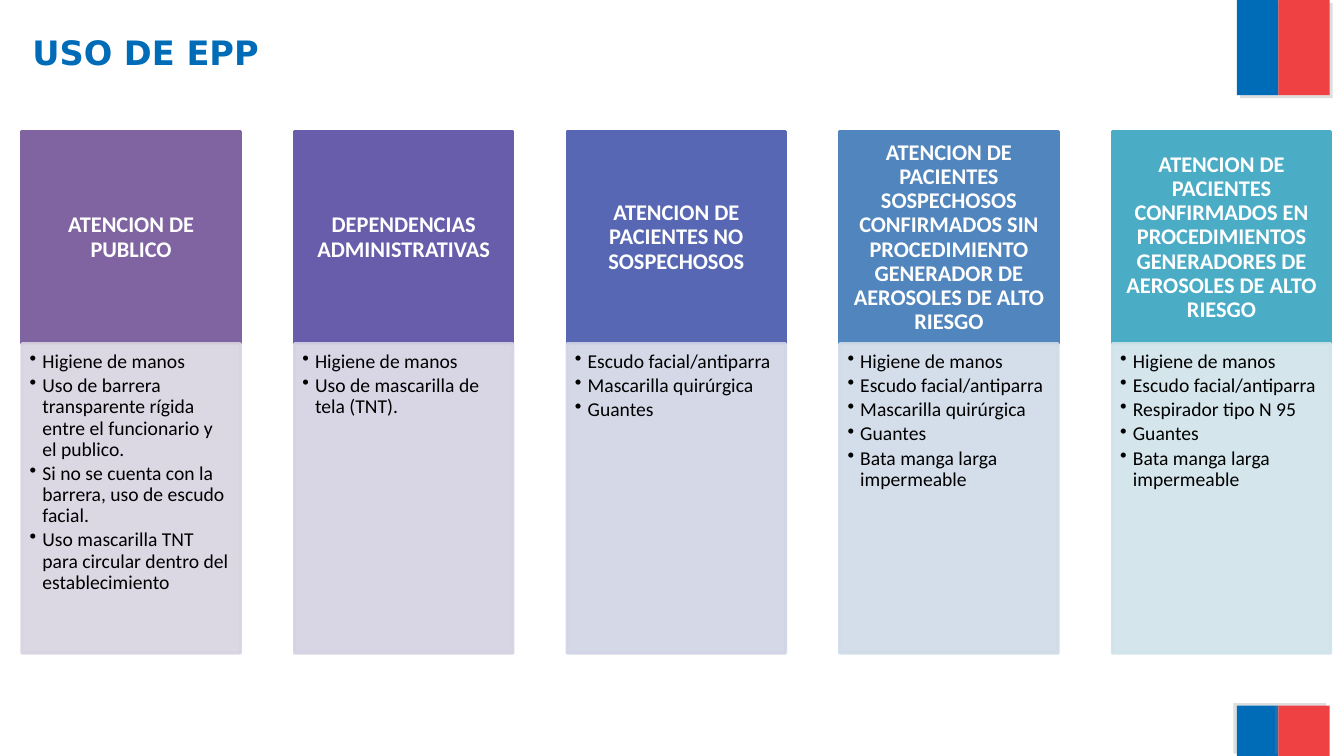
from lxml import etree
from pptx import Presentation
from pptx.dml.color import RGBColor
from pptx.enum.shapes import MSO_SHAPE
from pptx.enum.text import MSO_ANCHOR, PP_ALIGN
from pptx.oxml.ns import qn
from pptx.util import Cm, Pt

RECT = MSO_SHAPE.RECTANGLE
TOP, MIDDLE = MSO_ANCHOR.TOP, MSO_ANCHOR.MIDDLE
LEFT, CENTER = PP_ALIGN.LEFT, PP_ALIGN.CENTER

BLUE, RED = "006CB7", "EF4144"
HANDS, SHIELD, MASK = "Higiene de manos", "Escudo facial/antiparra", "Mascarilla quirúrgica"
GLOVES, GOWN = "Guantes", "Bata manga larga impermeable"

# Heading, heading colour, body colour, items
COLUMNS = [
    ("ATENCION DE PUBLICO", "8064A2", "D8D3E0",
     [HANDS,
      "Uso de barrera transparente rígida entre el funcionario y el publico.",
      "Si no se cuenta con la barrera, uso de escudo facial.",
      "Uso mascarilla TNT para circular dentro del establecimiento"]),
    ("DEPENDENCIAS ADMINISTRATIVAS", "685DAB", "D4D2E3",
     [HANDS, "Uso de mascarilla de tela (TNT)."]),
    ("ATENCION DE PACIENTES NO SOSPECHOSOS", "5767B4", "D1D4E5",
     [SHIELD, MASK, GLOVES]),
    ("ATENCION DE PACIENTES SOSPECHOSOS CONFIRMADOS SIN PROCEDIMIENTO "
     "GENERADOR DE AEROSOLES DE ALTO RIESGO", "5185BD", "D0DBE8",
     [HANDS, SHIELD, MASK, GLOVES, GOWN]),
    ("ATENCION DE PACIENTES CONFIRMADOS EN PROCEDIMIENTOS GENERADORES "
     "DE AEROSOLES DE ALTO RIESGO", "4BACC6", "D0E3EA",
     [HANDS, SHIELD, "Respirador tipo N 95", GLOVES, GOWN]),
]


def color(code):
    return RGBColor.from_string(code)


def style(para, font, size, code, bold=False):
    for run in para.runs:
        run.font.name = font
        run.font.size = Pt(size)
        run.font.bold = bold
        run.font.color.rgb = color(code)


def add_rect(slide, x, y, w, h, code):
    rect = slide.shapes.add_shape(RECT, Cm(x), Cm(y), Cm(w), Cm(h))
    rect.shadow.inherit = False
    rect.fill.solid()
    rect.fill.fore_color.rgb = color(code)
    rect.line.fill.background()
    return rect


def add_panel(slide, x, y, w, h, code, insets, anchor):
    panel = add_rect(slide, x, y, w, h, code)
    panel.line.color.rgb = color(code)
    panel.line.width = Pt(2)
    frame = panel.text_frame
    frame.word_wrap = True
    frame.vertical_anchor = anchor
    (frame.margin_left, frame.margin_top,
     frame.margin_right, frame.margin_bottom) = [Cm(inset) for inset in insets]
    return panel


def add_shade(shape, angle):
    effects = shape._element.spPr.find(qn("a:effectLst"))
    shade = etree.SubElement(effects, qn("a:outerShdw"), blurRad="0",
                             dist=str(Pt(3)), dir=str(angle * 60000))
    tint = etree.SubElement(shade, qn("a:srgbClr"), val="808080")
    etree.SubElement(tint, qn("a:alpha"), val="25000")


def add_flag(slide, x, y, h, angle):
    for left, width, code in ((x, 1.05, BLUE), (x + 1.05, 1.29, RED)):
        add_shade(add_rect(slide, left, y, width, h, code), angle)


def add_title(slide, x, y, w, h):
    title = slide.shapes.title
    title.left, title.top, title.width, title.height = Cm(x), Cm(y), Cm(w), Cm(h)
    frame = title.text_frame
    frame.text = "USO DE EPP"
    frame.vertical_anchor = MIDDLE
    para = frame.paragraphs[0]
    para.alignment = LEFT
    style(para, "DejaVu Sans", 24, BLUE, True)


def add_head(slide, x, y, w, h, text, code):
    panel = add_panel(slide, x, y, w, h, code, (0.3, 0.18, 0.3, 0.18), MIDDLE)
    panel.text_frame.text = text
    para = panel.text_frame.paragraphs[0]
    para.alignment = CENTER
    para.line_spacing = 0.9
    style(para, "Calibri", 16, "FFFFFF", True)


def add_list(slide, x, y, w, h, items, code):
    panel = add_panel(slide, x, y, w, h, code, (0.2, 0.2, 0.28, 0.3), TOP)
    for tint in panel._element.spPr.iter(qn("a:srgbClr")):
        etree.SubElement(tint, qn("a:alpha"), val="90000")
    frame = panel.text_frame
    frame.text = "\n".join(items)
    for para in frame.paragraphs:
        para.level = 1
        para.alignment = LEFT
        para.line_spacing = 0.9
        para.space_after = Pt(2.1)
        style(para, "Calibri", 14, "000000")
        # Bullet with hanging indent
        props = para._p.get_or_add_pPr()
        props.set("marL", str(Cm(0.32)))
        props.set("indent", str(Cm(-0.32)))
        etree.SubElement(props, qn("a:buChar"), char="•")


def add_columns(slide, x, y, w, h):
    width, head = 5.51, 5.34
    step = (w - width) / (len(COLUMNS) - 1)
    for i, (text, dark, light, items) in enumerate(COLUMNS):
        left = x + i * step
        add_head(slide, left, y, width, head, text, dark)
        add_list(slide, left, y + head, width, h - head, items, light)


def main():
    deck = Presentation()
    deck.slide_width, deck.slide_height = Cm(33.87), Cm(19.05)
    slide = deck.slides.add_slide(deck.slide_layouts[5])
    # Flag blocks at the right edge
    add_flag(slide, 31.17, 0, 2.4, 45)
    add_flag(slide, 31.17, 17.78, 1.27, 215)
    # Title and the five columns
    add_title(slide, 0.56, 0.43, 30.25, 1.75)
    add_columns(slide, 0.55, 3.32, 32.99, 13.14)
    deck.save("out.pptx")


if __name__ == "__main__":
    main()
